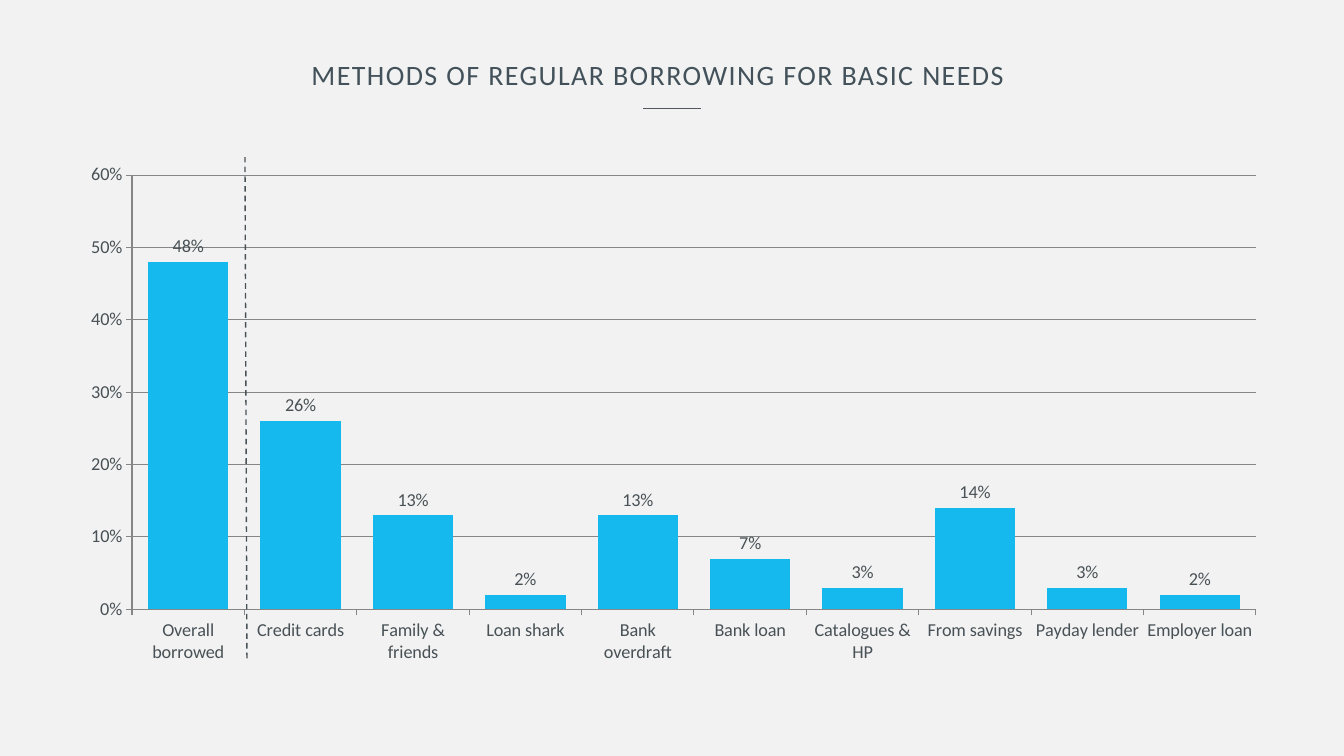
"""Build a slide with a column chart of regular borrowing methods."""
import pptx
import pptx.chart.data
import pptx.dml.color
import pptx.enum.chart
import pptx.enum.dml
import pptx.enum.shapes
import pptx.enum.text
import pptx.oxml
import pptx.oxml.ns
import pptx.util

Pt = pptx.util.Pt
RGB = pptx.dml.color.RGBColor
PAPER = RGB(0xF2, 0xF2, 0xF2)
TITLE = RGB(0x43, 0x52, 0x5A)
TEXT = RGB(0x48, 0x51, 0x56)
RULE = RGB(0x53, 0x58, 0x5F)
GRID = RGB(0x86, 0x86, 0x86)
BLUE = RGB(0x15, 0xB9, 0xED)

loans = {
    "Overall borrowed": 0.48,
    "Credit cards": 0.26,
    "Family & friends": 0.13,
    "Loan shark": 0.02,
    "Bank overdraft": 0.13,
    "Bank loan": 0.07,
    "Catalogues & HP": 0.03,
    "From savings": 0.14,
    "Payday lender": 0.03,
    "Employer loan": 0.02,
}


def style(item, form):
    for key, value in form.items():
        setattr(item, key, value)


deck = pptx.Presentation()
style(deck, {"slide_width": Pt(960), "slide_height": Pt(540)})
slide = deck.slides.add_slide(deck.slide_layouts[6])
slide.background.fill.solid()
slide.background.fill.fore_color.rgb = PAPER

box = slide.shapes.add_textbox(Pt(45.4), Pt(43.9), Pt(849), Pt(34.6))
frame = box.text_frame
style(frame, {
    "word_wrap": True, "vertical_anchor": pptx.enum.text.MSO_ANCHOR.TOP,
    "margin_left": 0, "margin_right": 0, "margin_top": 0, "margin_bottom": 0,
})
para = frame.paragraphs[0]
style(para, {"alignment": pptx.enum.text.PP_ALIGN.CENTER, "line_spacing": 0.9})
run = para.add_run()
run.text = "METHODS OF REGULAR BORROWING FOR BASIC NEEDS"
style(run.font, {"name": "Calibri", "size": Pt(20)})
run.font.color.rgb = TITLE
run.font._element.set("spc", "100")

data = pptx.chart.data.CategoryChartData(number_format="0%")
data.categories = list(loans)
data.add_series("Series 1", list(loans.values()))
chart = slide.shapes.add_chart(
    pptx.enum.chart.XL_CHART_TYPE.COLUMN_CLUSTERED,
    Pt(51.1), Pt(110.2), Pt(863.3), Pt(373.7), data).chart
style(chart, {"has_title": False, "has_legend": False})
style(chart.font, {"name": "Calibri", "size": Pt(13)})
chart.font.color.rgb = TEXT

plot = chart.plots[0]
style(plot, {"gap_width": 40, "vary_by_categories": False, "has_data_labels": True})
style(plot.data_labels, {
    "show_value": True, "number_format": "0%", "number_format_is_linked": False,
    "position": pptx.enum.chart.XL_LABEL_POSITION.OUTSIDE_END,
})
fill = plot.series[0].format.fill
fill.solid()
fill.fore_color.rgb = BLUE

style(chart.value_axis, {
    "minimum_scale": 0, "maximum_scale": 0.6, "major_unit": 0.1,
    "has_major_gridlines": True,
})
style(chart.value_axis.tick_labels, {
    "number_format": "0%", "number_format_is_linked": False,
})
for axis in (chart.value_axis, chart.category_axis):
    axis.major_tick_mark = pptx.enum.chart.XL_TICK_MARK.OUTSIDE
for part in (chart.value_axis, chart.category_axis, chart.value_axis.major_gridlines):
    part.format.line.width = Pt(0.75)
    part.format.line.color.rgb = GRID

area = chart._chartSpace.chart.plotArea
for old in area.findall(pptx.oxml.ns.qn("c:layout")):
    area.remove(old)
sides = {"x": 0.05, "y": 0.04, "w": 0.93, "h": 0.83}
spots = "".join(f'<c:{key}Mode val="edge"/>' for key in "xy")
spots += "".join(f'<c:{key} val="{value}"/>' for key, value in sides.items())
area.insert(0, pptx.oxml.parse_xml(
    f'<c:layout {pptx.oxml.ns.nsdecls("c")}><c:manualLayout>'
    f'<c:layoutTarget val="inner"/>{spots}</c:manualLayout></c:layout>'))

lines = [
    ((176.4, 470.2, 175, 112.3), TEXT, pptx.enum.dml.MSO_LINE.DASH),
    ((459.4, 77.5, 500.4, 77.5), RULE, pptx.enum.dml.MSO_LINE.SOLID),
]
for ends, color, dash in lines:
    line = slide.shapes.add_connector(
        pptx.enum.shapes.MSO_CONNECTOR.STRAIGHT, *map(Pt, ends))
    style(line.line, {"width": Pt(1), "dash_style": dash})
    line.line.color.rgb = color
    line._element.spPr.append(pptx.oxml.parse_xml(
        f'<a:effectLst {pptx.oxml.ns.nsdecls("a")}/>'))

deck.save("out.pptx")
